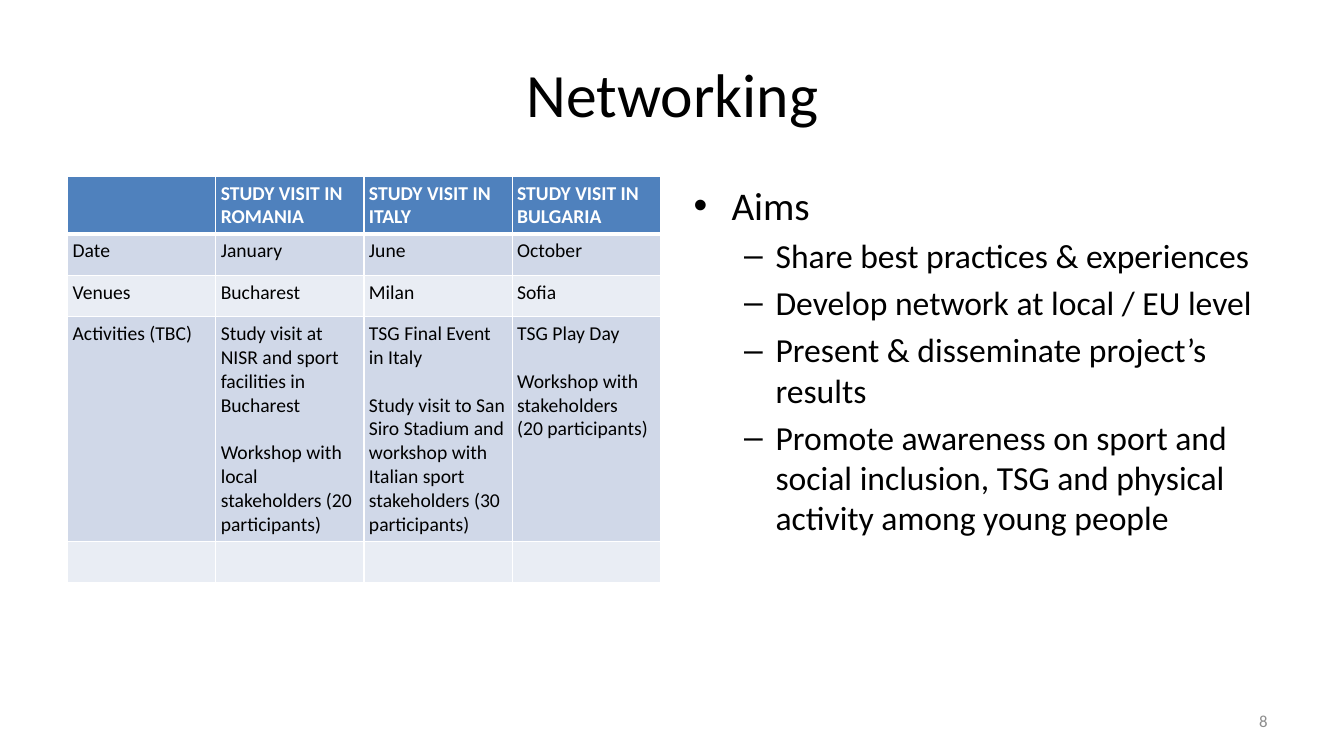
"""Build the Networking slide: a study visit table beside a list of aims."""
from dataclasses import dataclass

from lxml import etree
from pptx import Presentation
from pptx import util as u
from pptx.dml.color import RGBColor
from pptx.enum import text
from pptx.oxml import ns

EMU_PER_PX = 9144
FONT = "Calibri"
COLORS = {
    "ink": "000000",
    "white": "FFFFFF",
    "header": "4F81BD",
    "odd_row": "D0D8E8",
    "even_row": "E9EDF4",
    "number": "8C8C8C",
}
COLUMN_WIDTH = 147
CELL_MARGIN = 5
THIN, THICK = 1, 3
ACTIVITY_GAP = 17


@dataclass(frozen=True)
class Box:
    left: int
    top: int
    width: int
    height: int


@dataclass(frozen=True)
class VisitRow:
    height: int
    fill: str
    cells: tuple[str, ...]
    gap: int = 0


@dataclass(frozen=True)
class Aim:
    wording: str
    level: int = 1
    size: int = 24


SLIDE = Box(0, 0, 1333, 750)
TITLE = Box(67, 30, 1200, 125)
VISITS = Box(67, 175, 4 * COLUMN_WIDTH, 402)
AIMS = Box(678, 175, 589, 495)
NUMBER = Box(956, 695, 311, 40)

VISIT_ROWS = [
    VisitRow(57, "header", ("", "STUDY VISIT IN ROMANIA", "STUDY VISIT IN ITALY",
                            "STUDY VISIT IN BULGARIA")),
    VisitRow(41, "odd_row", ("Date", "January", "June", "October")),
    VisitRow(41, "even_row", ("Venues", "Bucharest", "Milan", "Sofia")),
    VisitRow(222, "odd_row", (
        "Activities (TBC)",
        "Study visit at NISR and sport facilities in Bucharest\n"
        "Workshop with local stakeholders (20 participants)",
        "TSG Final Event in Italy\n"
        "Study visit to San Siro Stadium and workshop with Italian sport "
        "stakeholders (30 participants)",
        "TSG Play Day\nWorkshop with stakeholders\n(20 participants)",
    ), ACTIVITY_GAP),
    VisitRow(41, "even_row", ("", "", "", "")),
]

AIM_LINES = [
    Aim("Aims", 0, 28),
    Aim("Share best practices & experiences"),
    Aim("Develop network at local / EU level"),
    Aim("Present & disseminate project’s results"),
    Aim("Promote awareness on sport and social inclusion, TSG and physical "
        "activity among young people"),
]


def px(length: int) -> u.Emu:
    return u.Emu(length * EMU_PER_PX)


def place(box: Box) -> tuple[u.Emu, ...]:
    return px(box.left), px(box.top), px(box.width), px(box.height)


def move(placeholder, box: Box) -> None:
    left, top, width, height = place(box)
    placeholder.left, placeholder.top = left, top
    placeholder.width, placeholder.height = width, height


def style(paragraph, size: int, color: str = "ink", bold: bool = False) -> None:
    font = paragraph.font
    font.name, font.size, font.bold = FONT, u.Pt(size), bold
    font.color.rgb = RGBColor.from_string(COLORS[color])


def add_borders(cell, top: int, bottom: int) -> None:
    properties = cell._tc.get_or_add_tcPr()
    for side, width in (("L", THIN), ("R", THIN), ("T", top), ("B", bottom)):
        border = etree.SubElement(properties, ns.qn(f"a:ln{side}"), w=str(u.Pt(width)))
        fill = etree.SubElement(border, ns.qn("a:solidFill"))
        etree.SubElement(fill, ns.qn("a:srgbClr"), val=COLORS["white"])


def fill_cell(cell, wording: str, row: VisitRow, index: int) -> None:
    header = index == 0
    add_borders(cell, THICK if index == 1 else THIN, THICK if header else THIN)
    cell.fill.solid()
    cell.fill.fore_color.rgb = RGBColor.from_string(COLORS[row.fill])
    cell.margin_left = cell.margin_right = px(CELL_MARGIN)
    cell.margin_top = cell.margin_bottom = px(CELL_MARGIN)
    cell.text = wording
    for position, paragraph in enumerate(cell.text_frame.paragraphs):
        style(paragraph, 14, "white" if header else "ink", header)
        if position == 1:
            paragraph.space_before = u.Pt(row.gap)


def add_visits(slide) -> None:
    columns = len(VISIT_ROWS[0].cells)
    visits = slide.shapes.add_table(len(VISIT_ROWS), columns, *place(VISITS)).table
    for column in visits.columns:
        column.width = px(COLUMN_WIDTH)
    for index, row in enumerate(VISIT_ROWS):
        visits.rows[index].height = px(row.height)
        for column, wording in enumerate(row.cells):
            fill_cell(visits.cell(index, column), wording, row, index)


def add_aims(slide) -> None:
    body = slide.placeholders[1]
    move(body, AIMS)
    body.text_frame.text = "\n".join(aim.wording for aim in AIM_LINES)
    for paragraph, aim in zip(body.text_frame.paragraphs, AIM_LINES):
        paragraph.level = aim.level
        style(paragraph, aim.size)
    body.text_frame.paragraphs[0].space_before = u.Pt(0)


def add_title(slide) -> None:
    title = slide.shapes.title
    move(title, TITLE)
    title.text_frame.text = "Networking"
    style(title.text_frame.paragraphs[0], 44)


def add_number(slide) -> None:
    frame = slide.shapes.add_textbox(*place(NUMBER)).text_frame
    frame.word_wrap = True
    frame.vertical_anchor = text.MSO_ANCHOR.MIDDLE
    frame.text = "8"
    frame.paragraphs[0].alignment = text.PP_ALIGN.RIGHT
    style(frame.paragraphs[0], 12, "number")


def main() -> None:
    deck = Presentation()
    deck.slide_width, deck.slide_height = px(SLIDE.width), px(SLIDE.height)
    slide = deck.slides.add_slide(deck.slide_layouts[1])
    add_title(slide)
    add_visits(slide)
    add_aims(slide)
    add_number(slide)
    deck.save("out.pptx")


if __name__ == "__main__":
    main()
